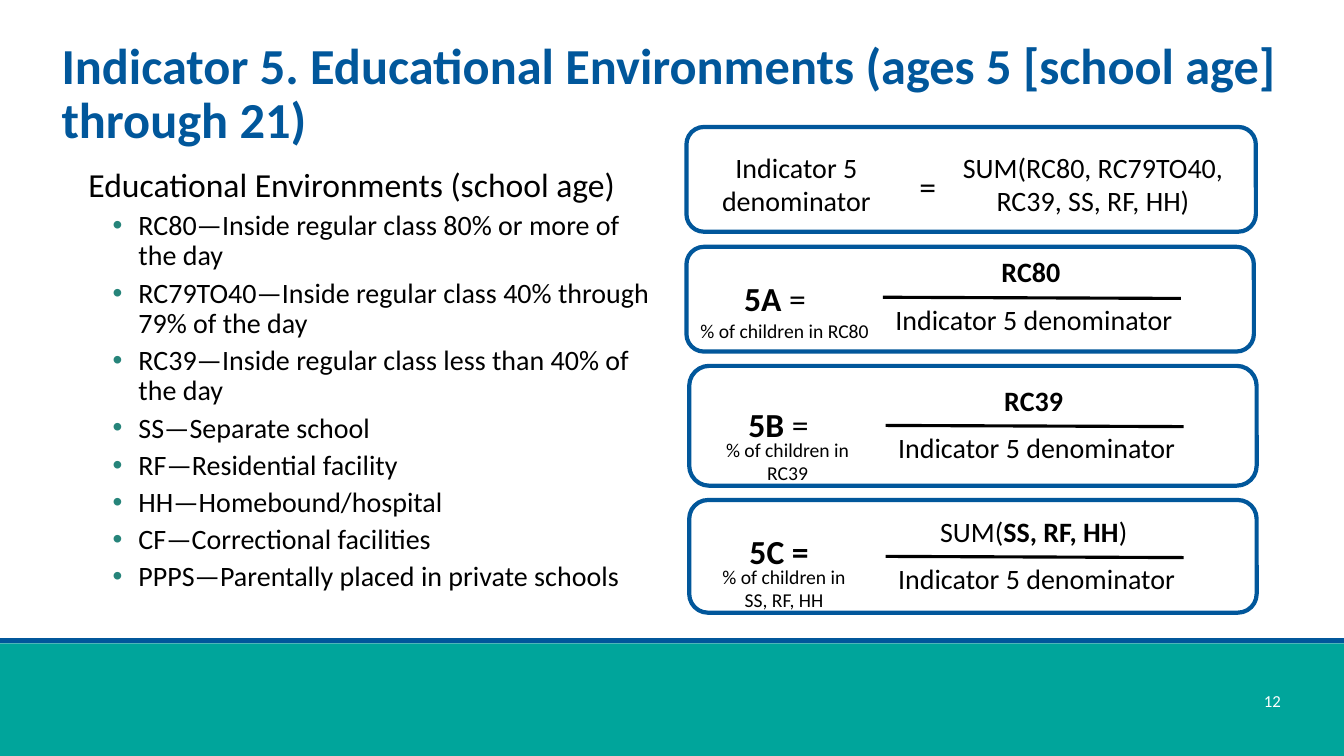
from pptx import Presentation
from pptx.dml.color import RGBColor
from pptx.enum.shapes import MSO_CONNECTOR as Line, MSO_SHAPE as Shape
from pptx.enum.text import MSO_ANCHOR as Anchor, PP_ALIGN as Align
from pptx.oxml.ns import qn
from pptx.util import Cm, Pt
from lxml import etree

FONT = "Calibri"
BLUE, TEAL, BULLET = "01579B", "00A59B", "26847A"
BLACK, WHITE = "000000", "FFFFFF"
DENOMINATOR = "Indicator 5 denominator"

ENVIRONMENTS = [
    "RC80—Inside regular class 80% or more of the day",
    "RC79TO40—Inside regular class 40% through 79% of the day",
    "RC39—Inside regular class less than 40% of the day",
    "SS—Separate school",
    "RF—Residential facility",
    "HH—Homebound/hospital",
    "CF—Correctional facilities",
    "PPPS—Parentally placed in private schools",
]

# Card (x, y, height), bar y, name y, name, numerator, caption box (x, y, width), caption
FORMULAS = [
    ((17.3, 6.22, 2.64), 7.49, 6.88, [("5A", True), (" = ", False)],
     [("RC80", True)], (17.3, 7.92, 4.95), "% of children in RC80"),
    ((17.37, 9.22, 3.02), 10.72, 10.06, [("5B ", True), ("= ", False)],
     [("RC39", True)], (17.6, 10.9, 4.5), "% of children in RC39"),
    ((17.37, 12.6, 2.84), 14.02, 13.26, [("5C = ", True)],
     [("SUM(", False), ("SS, RF, HH", True), (")", False)],
     (17.78, 14.1, 3.96), "% of children in SS, RF, HH"),
]


def rgb(color):
    return RGBColor.from_string(color)


def write(p, text, size=20, color=BLACK, bold=False, align=Align.CENTER,
          spacing=None, before=0):
    """Fill a paragraph with a string or a list of (text, bold) runs."""
    p.alignment = align
    p.space_before = Pt(before)
    if spacing:
        p.line_spacing = spacing
    for part, heavy in [(text, bold)] if isinstance(text, str) else text:
        r = p.add_run()
        r.text = part
        r.font.name, r.font.size, r.font.bold = FONT, Pt(size), heavy
        r.font.color.rgb = rgb(color)


def set_frame(tf, inset=None, anchor=Anchor.TOP):
    tf.word_wrap = True
    tf.vertical_anchor = anchor
    if inset is not None:
        tf.margin_left = tf.margin_right = Cm(inset)
        tf.margin_top = tf.margin_bottom = Cm(inset)


def add_text(s, x, y, w, h, text, inset=None, anchor=Anchor.TOP, **fmt):
    tf = s.shapes.add_textbox(Cm(x), Cm(y), Cm(w), Cm(h)).text_frame
    set_frame(tf, inset, anchor)
    write(tf.paragraphs[0], text, **fmt)
    return tf


def set_indent(p, left, first=0, bullet=None):
    pPr = p._p.get_or_add_pPr()
    pPr.set("marL", str(Cm(left)))
    pPr.set("indent", str(Cm(first)))
    if bullet:
        color = etree.SubElement(pPr, qn("a:buClr"))
        etree.SubElement(color, qn("a:srgbClr")).set("val", bullet)
        etree.SubElement(pPr, qn("a:buFont")).set("typeface", "Arial")
        etree.SubElement(pPr, qn("a:buChar")).set("char", "•")


def add_band(s, y, h, color):
    sp = s.shapes.add_shape(Shape.RECTANGLE, 0, Cm(y), Cm(33.87), Cm(h))
    sp.shadow.inherit = False
    sp.fill.solid()
    sp.fill.fore_color.rgb = rgb(color)
    sp.line.fill.background()


def add_card(s, x, y, h, w=14.3):
    sp = s.shapes.add_shape(Shape.ROUNDED_RECTANGLE, Cm(x), Cm(y), Cm(w), Cm(h))
    sp.shadow.inherit = False
    sp.fill.background()
    sp.line.color.rgb = rgb(BLUE)
    sp.line.width = Pt(3)


def add_bar(s, x, y):
    bar = s.shapes.add_connector(Line.STRAIGHT, Cm(x), Cm(y), Cm(x + 7.51), Cm(y + 0.03))
    bar.line.color.rgb = rgb(BLACK)
    bar.line.width = Pt(2.25)
    etree.SubElement(bar._element.spPr, qn("a:effectLst"))


def add_title(s, text):
    sp = s.shapes.title
    sp.left, sp.top, sp.width, sp.height = Cm(1.55), Cm(1.02), Cm(30.71), Cm(3.68)
    set_frame(sp.text_frame, inset=0)
    write(sp.text_frame.paragraphs[0], text, size=36, color=BLUE, bold=True,
          align=Align.LEFT, spacing=0.9)


def add_environments(s):
    tf = add_text(s, 1.57, 4.24, 15.14, 11.18, "Educational Environments\u00a0(school age)",
                  inset=0, size=24, align=Align.LEFT, spacing=0.9)
    set_indent(tf.paragraphs[0], 0.66)
    for item in ENVIRONMENTS:
        p = tf.add_paragraph()
        p.level = 1
        write(p, item, align=Align.LEFT, spacing=0.9, before=5)
        set_indent(p, 1.92, -0.65, BULLET)


def add_formula(s, card, bar_y, name_y, name, numerator, caption_box, caption):
    x = card[0]
    add_card(s, *card)
    add_text(s, x + 3.99, bar_y, 9.53, 1.12, DENOMINATOR)
    add_text(s, x + 5.3, bar_y - 1.19, 6.76, 1.12, numerator)
    add_bar(s, x + 4.95, bar_y)
    add_text(s, x + 0.3, name_y, 3.15, 1.27, name, size=24, align=Align.RIGHT)
    add_text(s, *caption_box, 0.86, caption, size=14)


def main():
    prs = Presentation()
    prs.slide_width, prs.slide_height = Cm(33.87), Cm(19.05)
    s = prs.slides.add_slide(prs.slide_layouts[5])

    # Footer bands and slide number
    add_band(s, 16.21, 2.84, TEAL)
    add_band(s, 16.08, 0.13, BLUE)
    add_text(s, 31.09, 16.94, 1.19, 1.42, "12", inset=0, anchor=Anchor.MIDDLE,
             size=12, color=WHITE, align=Align.RIGHT)

    # Title and list
    add_title(s, "Indicator 5. Educational Environments (ages 5 [school age] through 21)")
    add_environments(s)

    # Denominator card
    add_card(s, 17.3, 3.2, 2.64, w=14.35)
    add_text(s, 17.48, 3.66, 5.18, 1.96, DENOMINATOR)
    add_text(s, 22.68, 4.06, 1.4, 1.27, "=", size=24)
    add_text(s, 23.62, 3.66, 7.85, 1.96, "SUM(RC80, RC79TO40, RC39, SS, RF, HH)")

    # Formula cards
    for formula in FORMULAS:
        add_formula(s, *formula)

    prs.save("out.pptx")


if __name__ == "__main__":
    main()
